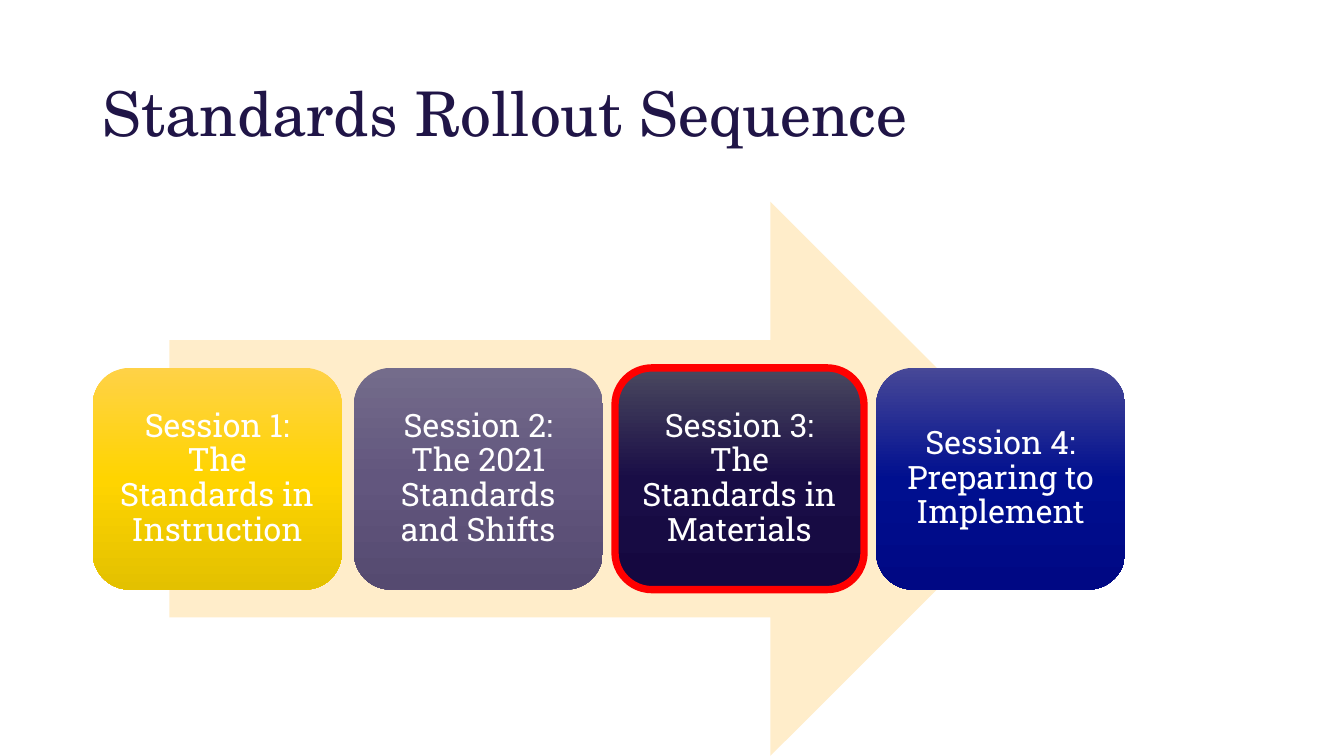
from copy import deepcopy
from dataclasses import dataclass

from pptx import Presentation
from pptx import util as u
from pptx.dml import color as dml
from pptx.enum import shapes, text
from pptx.oxml import ns

COLORS = {
    "title": "201547",
    "arrow": "FFEDCA",
    "label": "FFFFFF",
    "highlight": "FF0000",
}
TITLE_FONT = "TeX Gyre Schola"
LABEL_FONT = "Roboto Slab"

CARD_LEFT, CARD_TOP = 0.92, 3.65
CARD_WIDTH, CARD_HEIGHT = 2.47, 2.2
CARD_PITCH = 2.59


@dataclass(frozen=True)
class Session:
    label: str
    gradient: tuple[str, str, str]
    highlighted: bool = False


SESSIONS = [
    Session("Session 1: The Standards in Instruction", ("FFD247", "FFD400", "E3C100")),
    Session("Session 2: The 2021 Standards and Shifts", ("746C8B", "62567E", "554A70")),
    Session("Session 3: The Standards in Materials", ("4A485F", "190D46", "150840"), True),
    Session("Session 4: Preparing to Implement", ("474897", "000F8F", "000884")),
]


def rgb(value: str) -> dml.RGBColor:
    return dml.RGBColor.from_string(value)


def write_text(shape, content: str, *, font: str, size: float, color: str,
               align=text.PP_ALIGN.LEFT, inset_y: float = 0.05) -> None:
    frame = shape.text_frame
    frame.word_wrap = True
    frame.vertical_anchor = text.MSO_ANCHOR.MIDDLE
    frame.margin_left = frame.margin_right = u.Inches(0.1)
    frame.margin_top = frame.margin_bottom = u.Inches(inset_y)
    paragraph = frame.paragraphs[0]
    paragraph.alignment = align
    paragraph.line_spacing = 0.9
    run = paragraph.add_run()
    run.text = content
    run.font.name = font
    run.font.size = u.Pt(size)
    run.font.color.rgb = rgb(color)


def add_shape(slide, kind, left: float, top: float, width: float, height: float):
    shape = slide.shapes.add_shape(
        kind, u.Inches(left), u.Inches(top), u.Inches(width), u.Inches(height))
    shape.shadow.inherit = False
    shape.line.fill.background()
    return shape


def fill_gradient(shape, colors: tuple[str, str, str]) -> None:
    shape.fill.gradient()
    shape.fill.gradient_angle = 270
    first_stop = next(shape._element.iter(ns.qn("a:gs")))
    first_stop.addnext(deepcopy(first_stop))
    for index, (stop, color) in enumerate(zip(shape.fill.gradient_stops, colors)):
        stop.position = index / 2
        stop.color.rgb = rgb(color)


def add_session(slide, session: Session, left: float) -> None:
    card = add_shape(slide, shapes.MSO_SHAPE.ROUNDED_RECTANGLE,
                     left, CARD_TOP, CARD_WIDTH, CARD_HEIGHT)
    fill_gradient(card, session.gradient)
    if session.highlighted:
        card.line.color.rgb = rgb(COLORS["highlight"])
        card.line.width = u.Pt(5.25)
    write_text(card, session.label, font=LABEL_FONT, size=23, color=COLORS["label"],
               align=text.PP_ALIGN.CENTER, inset_y=0.1)


def main() -> None:
    presentation = Presentation()
    presentation.slide_width = u.Inches(13.33)
    presentation.slide_height = u.Inches(7.5)
    slide = presentation.slides.add_slide(presentation.slide_layouts[6])

    title = slide.shapes.add_textbox(
        u.Inches(0.92), u.Inches(0.47), u.Inches(10.24), u.Inches(1.38))
    write_text(title, "Standards Rollout Sequence",
               font=TITLE_FONT, size=44, color=COLORS["title"])

    arrow = add_shape(slide, shapes.MSO_SHAPE.RIGHT_ARROW, 1.68, 2, 8.71, 5.5)
    arrow.fill.solid()
    arrow.fill.fore_color.rgb = rgb(COLORS["arrow"])

    for index, session in enumerate(SESSIONS):
        add_session(slide, session, CARD_LEFT + index * CARD_PITCH)

    presentation.save("out.pptx")


if __name__ == "__main__":
    main()
